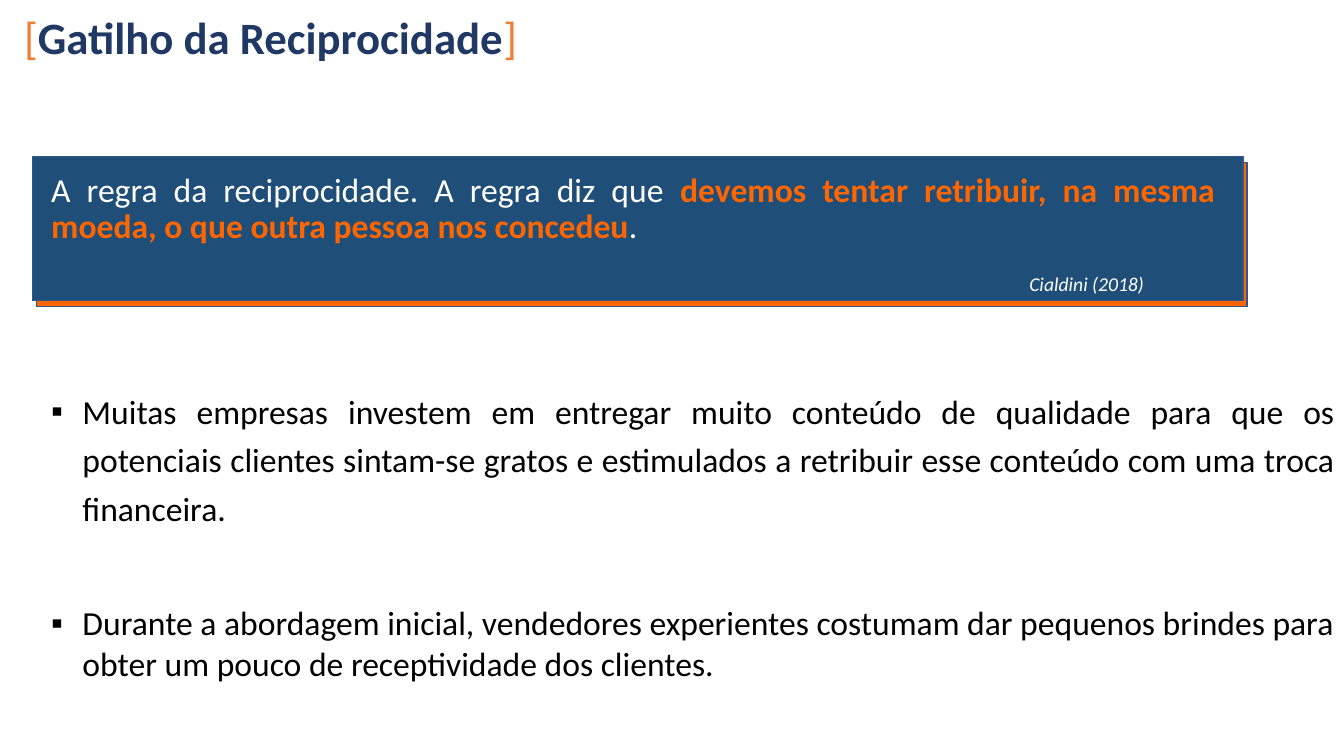
from dataclasses import dataclass

from lxml import etree
from pptx import Presentation
from pptx.dml.color import RGBColor
from pptx.enum.shapes import MSO_SHAPE
from pptx.enum.text import PP_ALIGN
from pptx.oxml.ns import qn
from pptx.util import Inches, Pt

RECTANGLE = MSO_SHAPE.RECTANGLE
JUSTIFY, LEFT = PP_ALIGN.JUSTIFY, PP_ALIGN.LEFT


@dataclass(frozen=True)
class Theme:
    font: str = "Calibri"
    title_size: int = 32
    body_size: int = 24
    source_size: int = 14
    bracket: str = "ED7D31"
    title: str = "203864"
    accent: str = "FF6600"
    panel: str = "1F4E79"
    outline: str = "325491"
    light: str = "FFFFFF"
    dark: str = "000000"


THEME = Theme()


def add_text_area(shapes, left, top, width, height):
    frame = shapes.add_textbox(
        Inches(left), Inches(top), Inches(width), Inches(height)).text_frame
    frame.word_wrap = True
    return frame


def add_run(paragraph, text, size, color, bold=False, italic=False):
    run = paragraph.add_run()
    run.text = text
    run.font.name = THEME.font
    run.font.size = Pt(size)
    run.font.bold = bold
    run.font.italic = italic
    run.font.color.rgb = RGBColor.from_string(color)


def set_bullet(paragraph, char, indent):
    properties = paragraph._p.get_or_add_pPr()
    properties.set("marL", str(Inches(indent)))
    properties.set("indent", str(-Inches(indent)))
    etree.SubElement(properties, qn("a:buFont")).set("typeface", "Arial")
    etree.SubElement(properties, qn("a:buChar")).set("char", char)


def add_title(slide, text, left, top, width, height):
    title = add_text_area(slide.shapes, left, top, width, height).paragraphs[0]
    add_run(title, "[", THEME.title_size, THEME.bracket)
    add_run(title, text, THEME.title_size, THEME.title, bold=True)
    add_run(title, "]", THEME.title_size, THEME.bracket)


def add_quote(slide, phrases, source, left, top, width, height):
    """Place a quotation panel; phrases are (text, emphasised) pairs."""
    shapes = slide.shapes.add_group_shape().shapes

    # Orange panel behind, blue panel in front
    for color, dx, dy in ((THEME.accent, 0.04, 0.06), (THEME.panel, 0, 0)):
        panel = shapes.add_shape(RECTANGLE, Inches(left + dx), Inches(top + dy),
                                 Inches(width), Inches(height))
        panel.shadow.inherit = False
        panel.fill.solid()
        panel.fill.fore_color.rgb = RGBColor.from_string(color)
        panel.line.color.rgb = RGBColor.from_string(THEME.outline)
        panel.line.width = Pt(1)

    # Quotation
    quote = add_text_area(
        shapes, left + 0.09, top + 0.12, width - 0.27, 0.83).paragraphs[0]
    quote.alignment = JUSTIFY
    quote.line_spacing = 0.9
    for text, emphasised in phrases:
        add_run(quote, text, THEME.body_size,
                THEME.accent if emphasised else THEME.light, bold=emphasised)

    # Source
    credit = add_text_area(
        shapes, left + 9.79, top + 1.12, width - 9.79, 0.31).paragraphs[0]
    credit.alignment = JUSTIFY
    credit.line_spacing = 0.9
    add_run(credit, source, THEME.source_size, THEME.light, italic=True)


def add_points(slide, points, left, top, width, height):
    """Place bullets; points are (text, alignment, line spacing, space before)."""
    frame = add_text_area(slide.shapes, left, top, width, height)
    frame.margin_right = Inches(0.09)
    for index, (text, alignment, spacing, before) in enumerate(points):
        point = frame.add_paragraph() if index else frame.paragraphs[0]
        point.alignment = alignment
        point.line_spacing = spacing
        point.space_before = Pt(before)
        point.space_after = Pt(6)
        set_bullet(point, "▪", 0.31)
        add_run(point, text, THEME.body_size, THEME.dark)


def main():
    presentation = Presentation()
    presentation.slide_width = Inches(13.33)
    presentation.slide_height = Inches(7.5)
    slide = presentation.slides.add_slide(presentation.slide_layouts[6])

    add_title(slide, "Gatilho da Reciprocidade", 0.14, 0.05, 9.46, 0.64)
    add_quote(
        slide,
        [("A regra da reciprocidade. A regra diz que ", False),
         ("devemos tentar retribuir, na mesma moeda, "
          "o que outra pessoa nos concedeu", True),
         (".", False)],
        "Cialdini (2018)", 0.32, 1.55, 12.01, 1.43)
    add_points(
        slide,
        [("Muitas empresas investem em entregar muito conteúdo de qualidade "
          "para que os potenciais clientes sintam-se gratos e estimulados a "
          "retribuir esse conteúdo com uma troca financeira.", JUSTIFY, 1.2, 0),
         ("Durante a abordagem inicial, vendedores experientes costumam dar "
          "pequenos brindes para obter um pouco de receptividade dos clientes.",
          LEFT, 1.0, 47)],
        0.41, 3.75, 12.92, 3.1)

    presentation.save("out.pptx")


if __name__ == "__main__":
    main()
